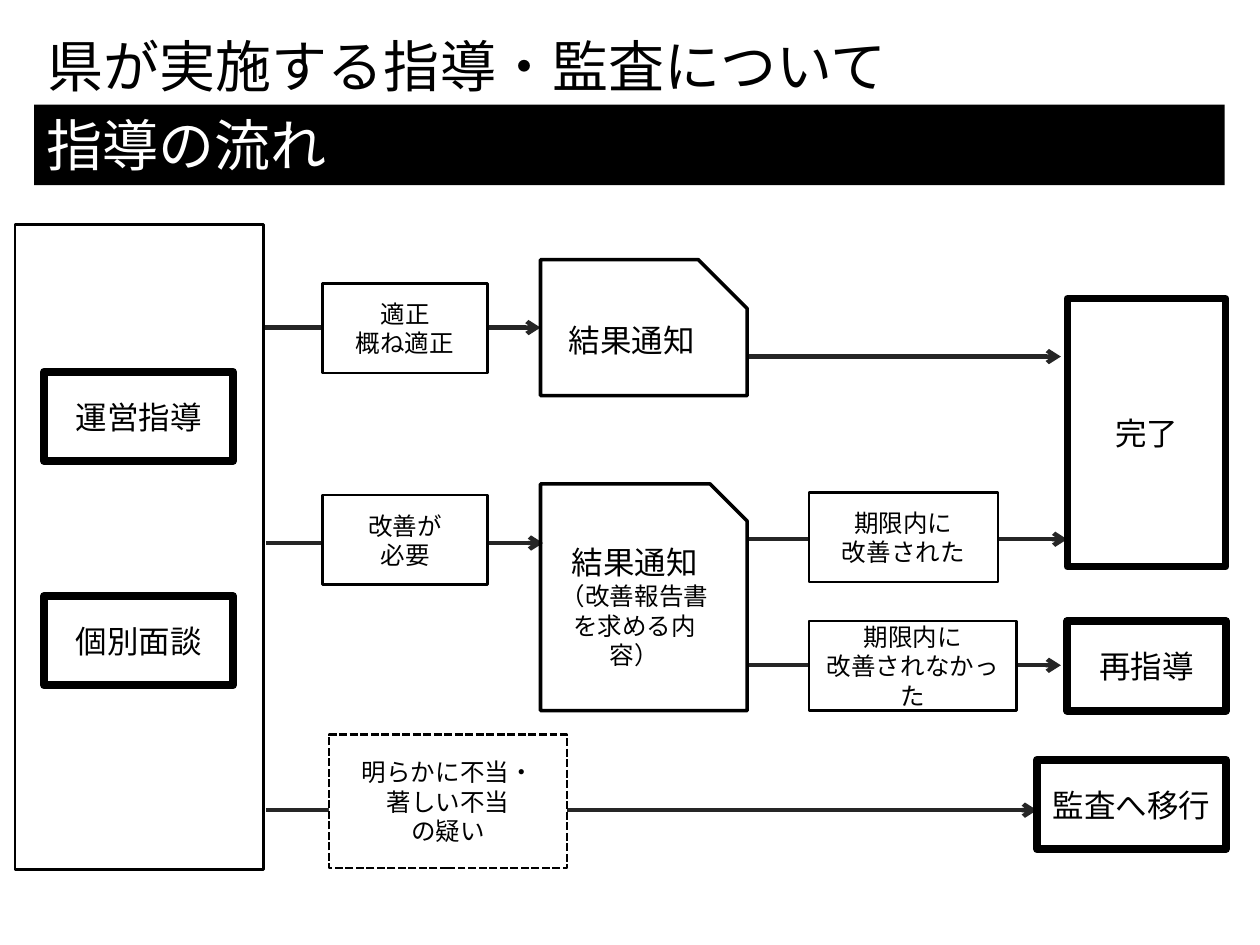
"""Build a slide showing how prefectural guidance leads to each outcome."""
from dataclasses import dataclass

from lxml.etree import SubElement
from pptx import Presentation
from pptx.dml.color import RGBColor
from pptx.enum.dml import MSO_LINE
from pptx.enum.lang import MSO_LANGUAGE_ID
from pptx.enum.shapes import MSO_CONNECTOR, MSO_SHAPE
from pptx.enum.text import MSO_ANCHOR, PP_ALIGN
from pptx.oxml.ns import qn
from pptx.util import Inches, Pt


@dataclass(frozen=True)
class Theme:
    black: RGBColor = RGBColor(0, 0, 0)
    white: RGBColor = RGBColor(255, 255, 255)
    arrow: RGBColor = RGBColor(0x26, 0x26, 0x26)
    heading_font: str = "Noto Sans CJK JP"
    body_font: str = "Calibri"
    heading_size: int = 32
    step_size: int = 18
    condition_size: int = 14


theme = Theme()


def write_text(shape, lines, sizes, font, color, alignment, anchor):
    frame = shape.text_frame
    frame.text = "\n".join(lines)
    frame.word_wrap = True
    frame.vertical_anchor = anchor
    for para, size in zip(frame.paragraphs, sizes):
        para.alignment = alignment
        for span in para.runs:
            span.font.name = font
            span.font.size = Pt(size)
            span.font.color.rgb = color
            span.font.language_id = MSO_LANGUAGE_ID.JAPANESE
            SubElement(span.font._element, qn("a:ea"), typeface=theme.heading_font)


def add_box(position, lines, sizes, weight, filled=False, kind=MSO_SHAPE.RECTANGLE):
    box = slide.shapes.add_shape(kind, *map(Inches, position))
    box.shadow.inherit = False
    if filled:
        box.fill.solid()
        box.fill.fore_color.rgb = theme.white
    else:
        box.fill.background()
    box.line.color.rgb = theme.black
    box.line.width = Pt(weight)
    if lines:
        write_text(box, lines, sizes, theme.body_font, theme.black,
                   PP_ALIGN.CENTER, MSO_ANCHOR.MIDDLE)
    return box


deck = Presentation()
deck.slide_width = Inches(10)
deck.slide_height = Inches(7.5)
slide = deck.slides.add_slide(deck.slide_layouts[5])

title = slide.shapes.title
title.left, title.top, title.width, title.height = map(Inches, (0.28, 0.2, 8.5, 0.64))
write_text(title, ["県が実施する指導・監査について"], [theme.heading_size],
           theme.heading_font, theme.black, PP_ALIGN.LEFT, MSO_ANCHOR.TOP)

banner = slide.shapes.add_shape(MSO_SHAPE.RECTANGLE, *map(Inches, (0.27, 0.83, 9.45, 0.64)))
banner.shadow.inherit = False
banner.fill.solid()
banner.fill.fore_color.rgb = theme.black
banner.line.fill.background()
write_text(banner, ["指導の流れ"], [theme.heading_size],
           theme.heading_font, theme.white, PP_ALIGN.LEFT, MSO_ANCHOR.TOP)

arrows = [
    (2.09, 4.29, 2.6),
    (2.11, 4.31, 4.31),
    (2.11, 8.23, 6.43),
    (5.94, 8.42, 2.83),
    (5.94, 8.47, 4.28),
    (5.94, 8.42, 5.28),
]
for start, end, height in arrows:
    arrow = slide.shapes.add_connector(
        MSO_CONNECTOR.STRAIGHT, Inches(start), Inches(height), Inches(end), Inches(height))
    arrow.line.color.rgb = theme.arrow
    arrow.line.width = Pt(2.5)
    SubElement(arrow.line._get_or_add_ln(), qn("a:tailEnd"), type="arrow")
    SubElement(arrow._element.spPr, qn("a:effectLst"))

add_box((0.12, 1.78, 1.97, 5.12), [], [], 1.5)

steps = [
    ((0.35, 2.95, 1.5, 0.71), "運営指導", 4.5),
    ((0.35, 4.73, 1.5, 0.71), "個別面談", 4.5),
    ((8.47, 2.37, 1.26, 2.13), "完了", 4),
    ((8.47, 4.93, 1.26, 0.71), "再指導", 4.5),
    ((8.23, 6.03, 1.5, 0.71), "監査へ移行", 4.5),
]
for position, label, weight in steps:
    add_box(position, [label], [theme.step_size], weight)

conditions = [
    ((2.56, 2.25, 1.31, 0.71), ["適正", "概ね適正"]),
    ((2.56, 3.93, 1.31, 0.71), ["改善が", "必要"]),
    ((6.42, 3.91, 1.5, 0.71), ["期限内に", "改善された"]),
    ((6.42, 4.93, 1.65, 0.71), ["期限内に", "改善されなかった"]),
    ((2.61, 5.83, 1.89, 1.06), ["明らかに不当・", "著しい不当", "の疑い"]),
]
for position, lines in conditions:
    condition = add_box(position, lines, [theme.condition_size] * len(lines), 1.5, filled=True)
condition.line.dash_style = MSO_LINE.SQUARE_DOT

notices = [
    ((4.29, 2.06, 1.64, 1.08), ["結果通知"], 0.36),
    ((4.29, 3.84, 1.64, 1.8), ["結果通知", "（改善報告書を求める内容）"], 0.18),
]
for position, lines, snip in notices:
    notice = add_box(position, lines, [theme.step_size, theme.condition_size], 2,
                     kind=MSO_SHAPE.SNIP_1_RECTANGLE)
    notice.adjustments[0] = snip

deck.save("out.pptx")
